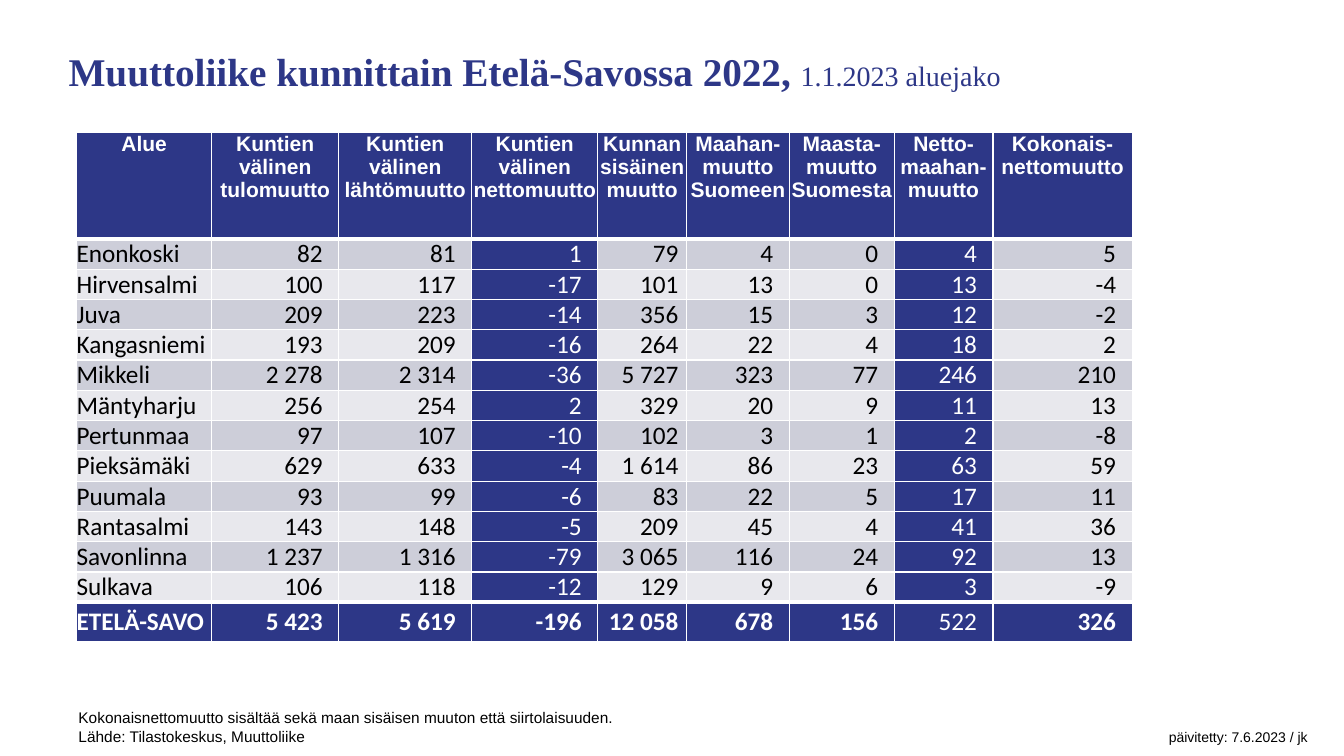
from dataclasses import dataclass

from lxml import etree
from pptx import Presentation
from pptx import util as u
from pptx.dml import color
from pptx.enum import text
from pptx.oxml import ns

GRID_COLUMNS, GRID_ROWS = 1333, 750
COLUMN_WIDTHS = [134, 126, 132, 125, 88, 102, 104, 98, 138]
HEADER_HEIGHT, BODY_HEIGHT, TOTAL_HEIGHT = 106, 27, 39
NET_COLUMNS = (3, 7)
INTERNAL_COLUMN, NET_IMMIGRATION_COLUMN = 4, 7

HEADERS = [
    "Alue", "Kuntien välinen tulomuutto", "Kuntien välinen lähtömuutto",
    "Kuntien välinen nettomuutto", "Kunnan sisäinen muutto",
    "Maahan-muutto Suomeen", "Maasta-muutto Suomesta",
    "Netto-maahan-muutto", "Kokonais-nettomuutto",
]
MUNICIPALITIES = [
    ["Enonkoski", "82", "81", "1", "79", "4", "0", "4", "5"],
    ["Hirvensalmi", "100", "117", "-17", "101", "13", "0", "13", "-4"],
    ["Juva", "209", "223", "-14", "356", "15", "3", "12", "-2"],
    ["Kangasniemi", "193", "209", "-16", "264", "22", "4", "18", "2"],
    ["Mikkeli", "2 278", "2 314", "-36", "5 727", "323", "77", "246", "210"],
    ["Mäntyharju", "256", "254", "2", "329", "20", "9", "11", "13"],
    ["Pertunmaa", "97", "107", "-10", "102", "3", "1", "2", "-8"],
    ["Pieksämäki", "629", "633", "-4", "1 614", "86", "23", "63", "59"],
    ["Puumala", "93", "99", "-6", "83", "22", "5", "17", "11"],
    ["Rantasalmi", "143", "148", "-5", "209", "45", "4", "41", "36"],
    ["Savonlinna", "1 237", "1 316", "-79", "3 065", "116", "24", "92", "13"],
    ["Sulkava", "106", "118", "-12", "129", "9", "6", "3", "-9"],
]
TOTAL = ["ETELÄ-SAVO", "5 423", "5 619", "-196", "12 058", "678", "156", "522", "326"]


@dataclass(frozen=True)
class Theme:
    navy: str = "2D3787"
    white: str = "FFFFFF"
    black: str = "000000"
    bands: tuple = ("CDCED9", "E8E8ED")
    title_font: str = "Times New Roman"
    label_font: str = "Arial"
    number_font: str = "Calibri"
    title: int = 28
    subtitle: int = 20
    header: int = 15
    number: int = 18
    note: int = 11
    date: int = 10
    thin: int = 1
    thick: int = 3


def apply(target, values):
    for name, value in values.items():
        setattr(target, name, value)


class SlideBuilder:
    def __init__(self, presentation, theme):
        self.theme = theme
        self.column = presentation.slide_width / GRID_COLUMNS
        self.row = presentation.slide_height / GRID_ROWS
        self.slide = presentation.slides.add_slide(presentation.slide_layouts[6])

    def across(self, columns):
        return u.Emu(round(columns * self.column))

    def down(self, rows):
        return u.Emu(round(rows * self.row))

    def place(self, left, top, width, height):
        return self.across(left), self.down(top), self.across(width), self.down(height)

    def run(self, paragraph, words, font, size, fill, bold=False):
        run = paragraph.add_run()
        run.text = words
        apply(run.font, {"name": font, "size": u.Pt(size), "bold": bold})
        run.font.color.rgb = color.RGBColor.from_string(fill)

    def text_box(self, position, paragraphs, frame_format, tab=None):
        """Each paragraph is a list of runs; tab is a right-aligned stop in grid columns."""
        frame = self.slide.shapes.add_textbox(*self.place(*position)).text_frame
        apply(frame, {"word_wrap": True, **frame_format})
        for index, runs in enumerate(paragraphs):
            paragraph = frame.add_paragraph() if index else frame.paragraphs[0]
            if tab:
                stops = etree.SubElement(paragraph._p.get_or_add_pPr(), ns.qn("a:tabLst"))
                etree.SubElement(stops, ns.qn("a:tab"), pos=str(self.across(tab)), algn="r")
            for values in runs:
                self.run(paragraph, *values)

    def borders(self, cell, top, bottom):
        properties = cell._tc.get_or_add_tcPr()
        sides = {"lnL": self.theme.thin, "lnR": self.theme.thin, "lnT": top, "lnB": bottom}
        for side, width in sides.items():
            line = etree.SubElement(properties, ns.qn(f"a:{side}"), w=str(u.Pt(width)))
            solid = etree.SubElement(line, ns.qn("a:solidFill"))
            etree.SubElement(solid, ns.qn("a:srgbClr"), val=self.theme.white)

    def cell_style(self, row, column, last):
        """Return font, size, text colour, bold, fill, anchor and alignment of a cell."""
        theme, align, anchor = self.theme, text.PP_ALIGN, text.MSO_ANCHOR
        if row == 0:
            return (theme.label_font, theme.header, theme.white, True,
                    theme.navy, anchor.TOP, align.CENTER)
        side = align.RIGHT if column else align.LEFT
        if row == last:
            bold = column != NET_IMMIGRATION_COLUMN
            return (theme.number_font, theme.number, theme.white, bold,
                    theme.navy, anchor.MIDDLE, side)
        net = column in NET_COLUMNS
        return (theme.number_font, theme.number, theme.white if net else theme.black, False,
                theme.navy if net else theme.bands[(row - 1) % 2], anchor.BOTTOM, side)

    def table(self, left, top, rows):
        heights = [HEADER_HEIGHT] + [BODY_HEIGHT] * (len(rows) - 2) + [TOTAL_HEIGHT]
        position = self.place(left, top, sum(COLUMN_WIDTHS), sum(heights))
        table = self.slide.shapes.add_table(len(rows), len(COLUMN_WIDTHS), *position).table
        apply(table, {"first_row": False, "horz_banding": False})
        for column, width in zip(table.columns, COLUMN_WIDTHS):
            column.width = self.across(width)
        for row, height in zip(table.rows, heights):
            row.height = self.down(height)
        last = len(rows) - 1
        for row, values in enumerate(rows):
            above = self.theme.thick if row in (1, last) else self.theme.thin
            below = self.theme.thick if row in (0, last - 1) else self.theme.thin
            for column, words in enumerate(values):
                cell = table.cell(row, column)
                *font, fill, anchor, alignment = self.cell_style(row, column, last)
                inset = 8 if column == INTERNAL_COLUMN else 16
                right = inset if row and column else 0
                apply(cell, {"margin_left": 0, "margin_top": 0, "margin_bottom": 0,
                             "margin_right": self.across(right), "vertical_anchor": anchor})
                self.borders(cell, above, below)
                cell.fill.solid()
                cell.fill.fore_color.rgb = color.RGBColor.from_string(fill)
                paragraph = cell.text_frame.paragraphs[0]
                paragraph.alignment = alignment
                self.run(paragraph, words, *font)


def main():
    presentation = Presentation()
    apply(presentation, {"slide_width": u.Inches(13.33), "slide_height": u.Inches(7.5)})
    theme = Theme()
    builder = SlideBuilder(presentation, theme)
    builder.text_box(
        (68, 44, 1173, 55),
        [[("Muuttoliike kunnittain Etelä-Savossa 2022, ",
           theme.title_font, theme.title, theme.navy, True),
          ("1.1.2023 aluejako", theme.title_font, theme.subtitle, theme.navy)]],
        {"margin_left": 0, "margin_top": 0, "margin_right": 0,
         "margin_bottom": builder.down(5), "vertical_anchor": text.MSO_ANCHOR.BOTTOM})
    note = (theme.label_font, theme.note, theme.black)
    builder.text_box(
        (68, 698, 1252, 47),
        [[("Kokonaisnettomuutto sisältää sekä maan sisäisen muuton että siirtolaisuuden.", *note)],
         [("Lähde: Tilastokeskus, Muuttoliike\t", *note),
          ("päivitetty: 7.6.2023 / jk", theme.label_font, theme.date, theme.black)]],
        {}, tab=1219)
    builder.table(76, 131, [HEADERS, *MUNICIPALITIES, TOTAL])
    presentation.save("out.pptx")


if __name__ == "__main__":
    main()
